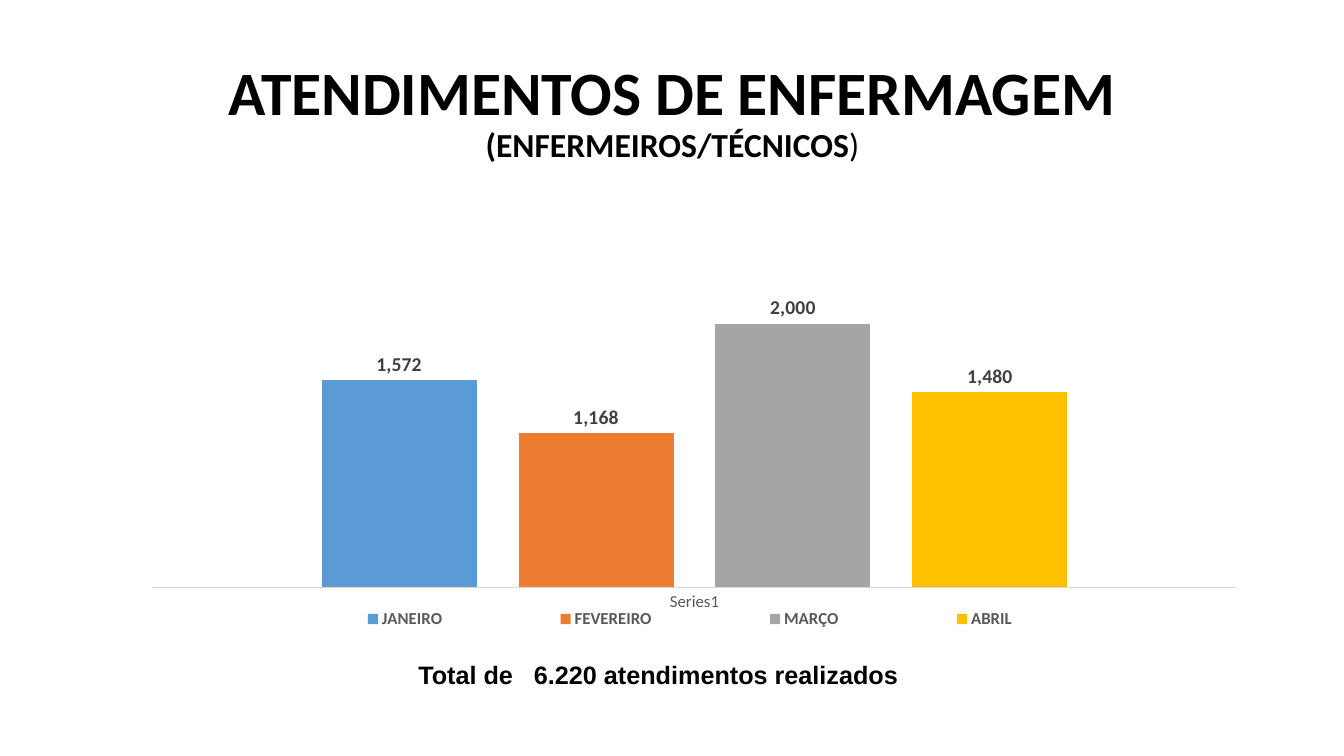
from lxml import etree
from pptx import Presentation
from pptx.chart.data import CategoryChartData
from pptx.dml.color import RGBColor
from pptx.enum.chart import XL_CHART_TYPE as Kind, XL_LABEL_POSITION as Spot
from pptx.enum.chart import XL_LEGEND_POSITION as Side, XL_TICK_MARK as Tick
from pptx.enum.text import MSO_ANCHOR as Anchor, MSO_AUTO_SIZE as Auto, PP_ALIGN as Align
from pptx.oxml.ns import qn
from pptx.util import Inches, Pt

BLACK = RGBColor(0, 0, 0)
DARK = RGBColor(0x40, 0x40, 0x40)
GREY = RGBColor(0x59, 0x59, 0x59)
PALE = RGBColor(0xD9, 0xD9, 0xD9)
BLUE = RGBColor(0x5B, 0x9B, 0xD5)
ORANGE = RGBColor(0xED, 0x7D, 0x31)
SILVER = RGBColor(0xA5, 0xA5, 0xA5)
GOLD = RGBColor(0xFF, 0xC0, 0x00)

HEAD = "ATENDIMENTOS DE ENFERMAGEM"
SUB = "(ENFERMEIROS/TÉCNICOS"
TOTAL = "Total de   6.220 atendimentos realizados"
GROUP = "Series1"
MONTHS = [
    ("JANEIRO", 1572, BLUE),
    ("FEVEREIRO", 1168, ORANGE),
    ("MARÇO", 2000, SILVER),
    ("ABRIL", 1480, GOLD),
]
LEFT, WIDE = 0.92, 11.5
PLOT = {"x": 0.051, "y": 0.129, "w": 0.936, "h": 0.751}
KEY = {"x": 0.14, "y": 0.917, "w": 0.75, "h": 0.07}


def style(font, size, color, bold=False, name="Calibri"):
    font.size, font.bold, font.name = Pt(size), bold, name
    font.color.rgb = color


def write(para, text, size=18, color=BLACK, bold=True, name="Calibri"):
    run = para.add_run()
    run.text = text
    style(run.font, size, color, bold, name)


def place(part, before, box, inner=False):
    """Fix the layout of a chart part, as fractions of the chart."""
    for old in part.findall(qn("c:layout")):
        part.remove(old)
    layout = etree.Element(qn("c:layout"))
    manual = etree.SubElement(layout, qn("c:manualLayout"))
    items = [("layoutTarget", "inner")] if inner else []
    items += [("xMode", "edge"), ("yMode", "edge"), *box.items()]
    for tag, val in items:
        etree.SubElement(manual, qn("c:" + tag)).set("val", str(val))
    part.find(qn(before)).addprevious(layout)


def add_title(slide):
    title = slide.shapes.title
    title.left, title.top = Inches(LEFT), Inches(0.4)
    title.width, title.height = Inches(WIDE), Inches(1.45)
    frame = title.text_frame
    frame.vertical_anchor, frame.word_wrap = Anchor.MIDDLE, True
    para = frame.paragraphs[0]
    para.alignment, para.line_spacing = Align.CENTER, 0.9
    write(para, HEAD, size=44)
    para.add_line_break()
    write(para, SUB, size=24)
    write(para, ")", size=24, bold=False)


def add_bars(slide):
    data = CategoryChartData(number_format="#,##0")
    data.categories = [GROUP]
    for name, count, _ in MONTHS:
        data.add_series(name, [count])
    chart = slide.shapes.add_chart(
        Kind.COLUMN_CLUSTERED, Inches(LEFT), Inches(2), Inches(WIDE), Inches(4.35), data
    ).chart
    chart.has_title = False
    style(chart.font, 10, BLACK)

    base = chart.category_axis
    base.major_tick_mark = base.minor_tick_mark = Tick.NONE
    base.format.line.color.rgb, base.format.line.width = PALE, Pt(0.75)
    style(base.tick_labels.font, 12, GREY)
    scale = chart.value_axis
    scale.visible = scale.has_major_gridlines = False
    scale.minimum_scale, scale.maximum_scale = 0, 2500

    plot = chart.plots[0]
    plot.gap_width, plot.overlap, plot.vary_by_categories = 219, -27, False
    for bar, (_, _, color) in zip(plot.series, MONTHS):
        bar.format.fill.solid()
        bar.format.fill.fore_color.rgb = color
        labels = bar.data_labels
        labels.show_value, labels.position = True, Spot.OUTSIDE_END
        labels.number_format, labels.number_format_is_linked = "#,##0", False
        style(labels.font, 14, DARK, True)

    chart.has_legend = True
    legend = chart.legend
    legend.position, legend.include_in_layout = Side.BOTTOM, False
    style(legend.font, 12, GREY, True)
    area = chart.element.find(".//" + qn("c:plotArea"))
    place(area, "c:barChart", PLOT, inner=True)
    place(chart.element.find(".//" + qn("c:legend")), "c:overlay", KEY)


def add_total(slide):
    box = slide.shapes.add_textbox(Inches(1.63), Inches(6.49), Inches(9.8), Inches(0.4))
    frame = box.text_frame
    frame.word_wrap, frame.auto_size = True, Auto.SHAPE_TO_FIT_TEXT
    para = frame.paragraphs[0]
    para.alignment = Align.CENTER
    write(para, TOTAL, name="Arial")


def main():
    deck = Presentation()
    deck.slide_width, deck.slide_height = Inches(13.33), Inches(7.5)
    slide = deck.slides.add_slide(deck.slide_layouts[5])
    add_title(slide)
    add_bars(slide)
    add_total(slide)
    deck.save("out.pptx")


if __name__ == "__main__":
    main()
